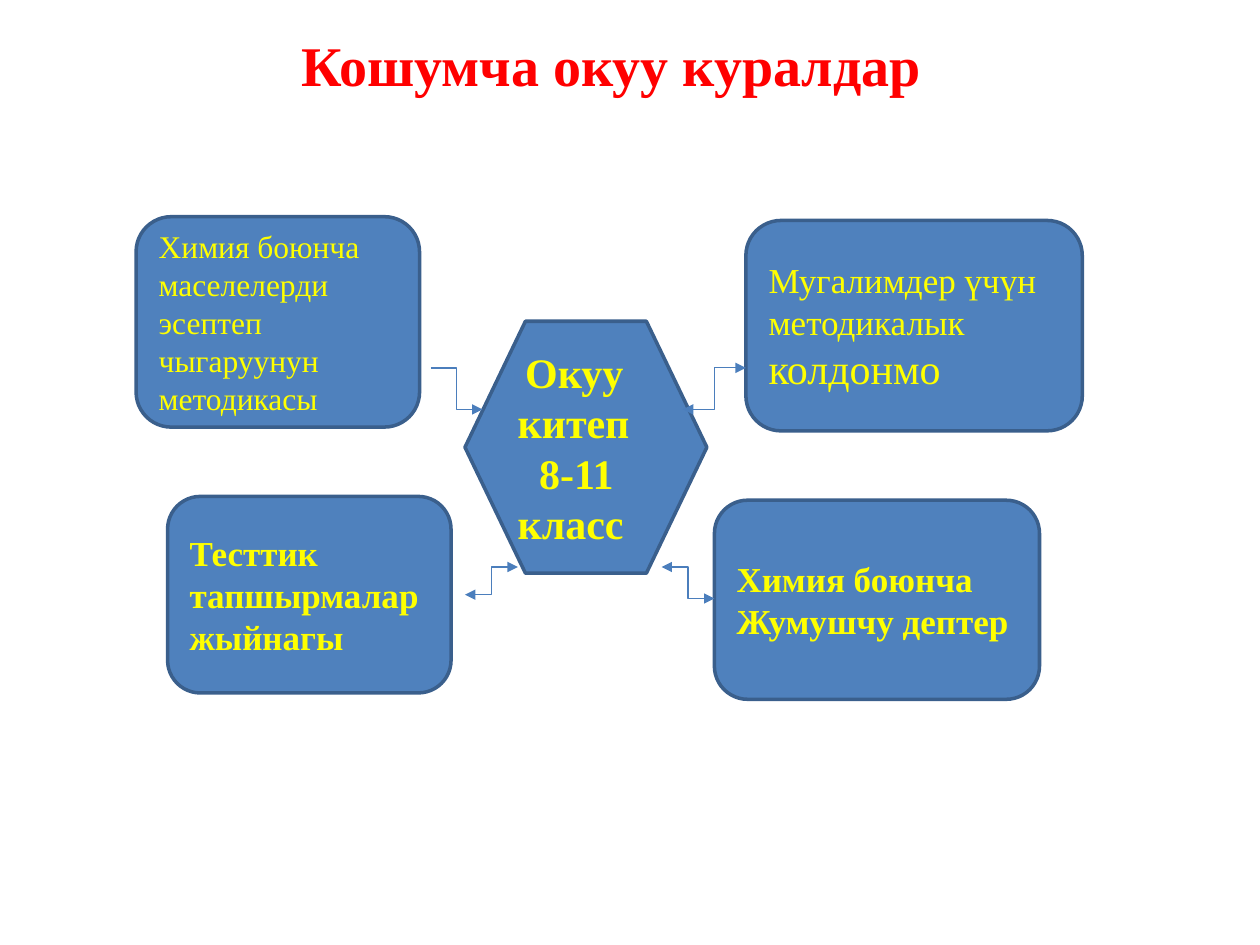
from lxml import etree
from pptx import Presentation
from pptx.dml.color import RGBColor
from pptx.enum.shapes import MSO_CONNECTOR, MSO_SHAPE
from pptx.enum.text import MSO_ANCHOR, PP_ALIGN
from pptx.oxml.ns import qn
from pptx.util import Inches, Pt

ROUNDED, HEXAGON = MSO_SHAPE.ROUNDED_RECTANGLE, MSO_SHAPE.HEXAGON
ELBOW = MSO_CONNECTOR.ELBOW
LEFT, MIDDLE = PP_ALIGN.LEFT, MSO_ANCHOR.MIDDLE
FONT = "Times New Roman"
RED = RGBColor(0xFF, 0x00, 0x00)
YELLOW = RGBColor(0xFF, 0xFF, 0x00)
BLUE = RGBColor(0x4F, 0x81, 0xBD)
BORDER = RGBColor(0x3A, 0x5F, 0x8C)
ARROW = RGBColor(0x4B, 0x7E, 0xBC)

# Content: shape, place, bold, paragraphs as (first-line indent, [(text, size)])
TITLE = "Кошумча окуу куралдар"
BOXES = [
    (ROUNDED, (1.08, 1.72, 2.25, 1.67), False,
     [(0, [("Химия боюнча маселелерди эсептеп чыгаруунун методикасы", 18)])]),
    (ROUNDED, (5.92, 1.75, 2.67, 1.67), False,
     [(0, [("Мугалимдер үчүн методикалык ", 20), ("колдонмо", 24)])]),
    (ROUNDED, (1.33, 3.94, 2.25, 1.56), True,
     [(0, [("Тесттик тапшырмалар жыйнагы", 20)])]),
    (ROUNDED, (5.67, 3.97, 2.58, 1.58), True,
     [(0, [("Химия боюнча Жумушчу дептер", 20)])]),
    (HEXAGON, (3.69, 2.55, 1.92, 2), True,
     [(0.06, [("Окуу китеп", 24)]), (0.17, [("8-11 класс", 24)])]),
]
# Arrows: start, end, arrowheads
ARROWS = [
    ((3.42, 2.92), (3.83, 3.25), ("tailEnd",)),
    ((5.42, 3.25), (5.92, 2.92), ("headEnd", "tailEnd")),
    ((5.25, 4.5), (5.67, 4.75), ("headEnd", "tailEnd")),
    ((3.69, 4.72), (4.11, 4.5), ("headEnd", "tailEnd")),
]


def add_box(page, kind, place, bold, paragraphs):
    box = page.shapes.add_shape(kind, *map(Inches, place))
    box.shadow.inherit = False
    box.fill.solid()
    box.fill.fore_color.rgb = BLUE
    box.line.color.rgb = BORDER
    box.line.width = Pt(2)
    frame = box.text_frame
    frame.word_wrap = True
    frame.vertical_anchor = MIDDLE
    for number, (indent, spans) in enumerate(paragraphs):
        para = frame.add_paragraph() if number else frame.paragraphs[0]
        para.alignment = LEFT
        para._p.get_or_add_pPr().set("indent", str(Inches(indent)))
        para.font.name = FONT
        para.font.bold = bold
        para.font.color.rgb = YELLOW
        for text, size in spans:
            span = para.add_run()
            span.text = text
            span.font.size = Pt(size)


def add_arrow(page, start, end, heads):
    arrow = page.shapes.add_connector(ELBOW, *map(Inches, start + end))
    arrow.line.color.rgb = ARROW
    arrow.line.width = Pt(0.75)
    line = arrow.line._get_or_add_ln()
    for head in heads:
        etree.SubElement(line, qn("a:" + head), type="triangle")
    etree.SubElement(arrow._element.spPr, qn("a:effectLst"))


deck = Presentation()
deck.slide_width, deck.slide_height = Inches(10), Inches(7.5)
page = deck.slides.add_slide(deck.slide_layouts[5])

# Title
title = page.shapes.title
title.left, title.top, title.width, title.height = map(Inches, (0.84, 0.24, 8.33, 0.54))
frame = title.text_frame
frame.text = TITLE
frame.margin_left = Inches(1.55)
frame.margin_top = frame.margin_right = frame.margin_bottom = 0
para = frame.paragraphs[0]
para.alignment = LEFT
para.font.name = FONT
para.font.size = Pt(32)
para.font.bold = True
para.font.color.rgb = RED

# Diagram
for box in BOXES:
    add_box(page, *box)
for arrow in ARROWS:
    add_arrow(page, *arrow)

deck.save("out.pptx")
